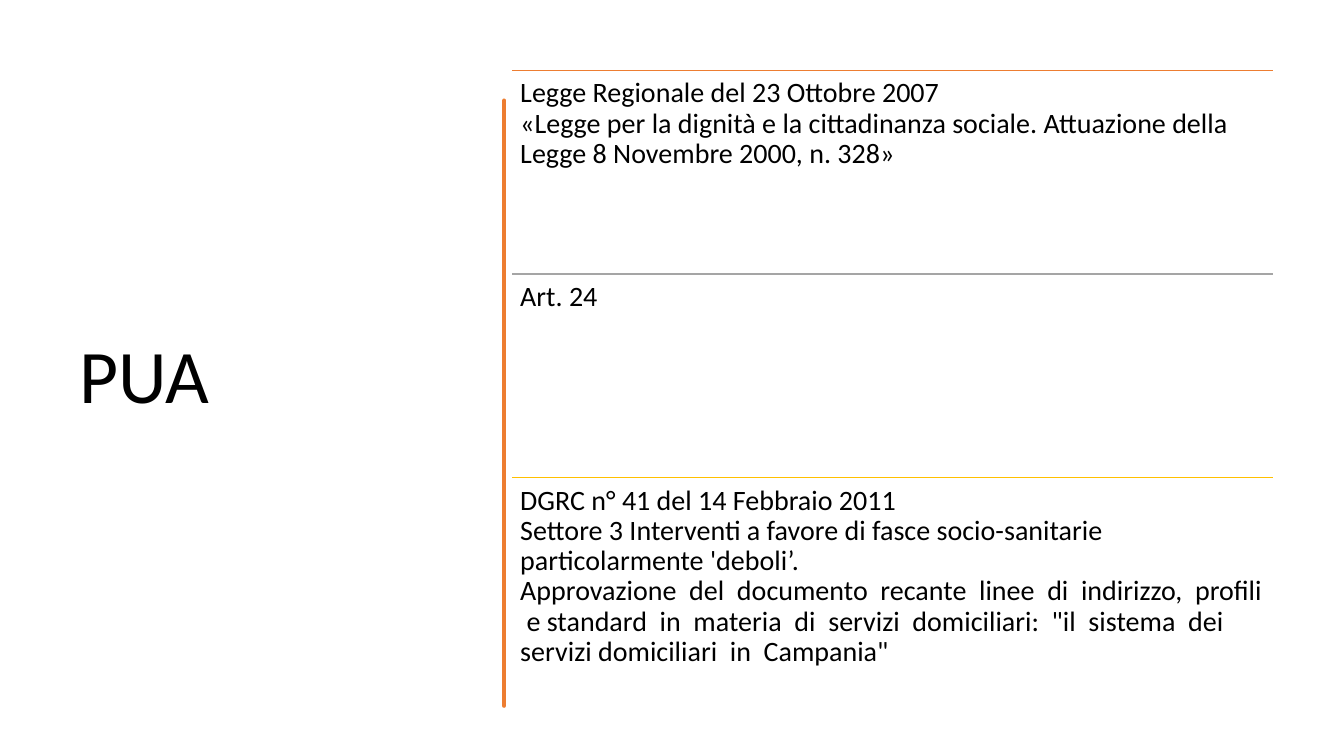
from lxml.etree import SubElement
from pptx import Presentation
from pptx.dml.color import RGBColor as Rgb
from pptx.enum.shapes import MSO_CONNECTOR as Connector
from pptx.enum.text import MSO_ANCHOR as Anchor, MSO_AUTO_SIZE as AutoSize, PP_ALIGN as Align
from pptx.oxml.ns import qn
from pptx.util import Inches, Pt

COLOURS = {"text": "000000", "orange": "ED7D31", "grey": "A5A5A5", "gold": "FFC000"}
FONT = "Calibri"
COLUMN_LEFT, COLUMN_WIDTH = 5.08, 7.55
ROW_TOP, ROW_HEIGHT = 0.7, 2.02
STEPS = 6

LAWS = [
    ("orange", "Legge Regionale del 23 Ottobre 2007\n"
     "«Legge per la dignità e la cittadinanza sociale. Attuazione della "
     "Legge 8 Novembre 2000, n. 328»"),
    ("grey", "Art. 24"),
    ("gold", "DGRC n° 41 del 14 Febbraio 2011\n"
     "Settore 3 Interventi a favore di fasce socio-sanitarie particolarmente 'deboli’.\n"
     "Approvazione  del  documento  recante  linee  di  indirizzo,  profili  e standard  in  "
     "materia  di  servizi  domiciliari:  \"il  sistema  dei  servizi domiciliari  in  Campania\""),
]

BRUSH_START = (4.75, 0.84)
BRUSH_CURVES = [
    (4.77, 1.02), (4.77, 1.19), (4.75, 1.46), (4.73, 1.73), (4.76, 1.95), (4.75, 2.26),
    (4.74, 2.57), (4.75, 2.62), (4.75, 2.94), (4.74, 3.25), (4.77, 3.42), (4.75, 3.56),
    (4.73, 3.7), (4.79, 4.14), (4.75, 4.36), (4.71, 4.57), (4.72, 4.84), (4.75, 5.1),
    (4.77, 5.36), (4.77, 5.64), (4.75, 5.84), (4.73, 6.03), (4.76, 6.5), (4.75, 6.76),
    (4.74, 6.76), (4.73, 6.76), (4.73, 6.76), (4.74, 6.46), (4.71, 6.44), (4.73, 6.13),
    (4.74, 5.83), (4.74, 5.7), (4.73, 5.57), (4.72, 5.44), (4.72, 4.95), (4.73, 4.77),
    (4.73, 4.59), (4.71, 4.45), (4.73, 4.15), (4.74, 3.86), (4.72, 3.73), (4.73, 3.35),
    (4.74, 2.98), (4.72, 2.81), (4.73, 2.5), (4.74, 2.18), (4.75, 2), (4.73, 1.81),
    (4.7, 1.63), (4.77, 1.04), (4.73, 0.84), (4.74, 0.84), (4.74, 0.84), (4.75, 0.84),
]


def colour(name):
    """Return the named colour."""
    return Rgb.from_string(COLOURS[name])


def write(frame, text, size):
    """Fill a text frame with one left-aligned paragraph."""
    frame.word_wrap = True
    frame.auto_size = AutoSize.NONE
    para = frame.paragraphs[0]
    para.text = text
    para.alignment = Align.LEFT
    para.line_spacing = 0.9
    para.font.name = FONT
    para.font.size = Pt(size)
    para.font.color.rgb = colour("text")


def set_title(page, text):
    """Place the title in the left column."""
    title = page.shapes.title
    title.left, title.top, title.width, title.height = map(Inches, (0.69, 0.7, 3.74, 6.11))
    title.text_frame.vertical_anchor = Anchor.MIDDLE
    write(title.text_frame, text, 54)


def curve_points(start, controls):
    """Yield points along a chain of cubic curves."""
    for first, second, end in zip(controls[::3], controls[1::3], controls[2::3]):
        for step in range(1, STEPS + 1):
            t = step / STEPS
            weights = ((1 - t) ** 3, 3 * t * (1 - t) ** 2, 3 * t * t * (1 - t), t ** 3)
            corners = (start, first, second, end)
            yield tuple(sum(w * c[axis] for w, c in zip(weights, corners)) for axis in (0, 1))
        start = end


def add_brush(page):
    """Draw the hand-drawn vertical divider."""
    builder = page.shapes.build_freeform(*BRUSH_START, scale=Inches(1))
    builder.add_line_segments(list(curve_points(BRUSH_START, BRUSH_CURVES)), close=True)
    brush = builder.convert_to_shape()
    brush.shadow.inherit = False
    brush.fill.solid()
    brush.fill.fore_color.rgb = colour("orange")
    brush.line.color.rgb = colour("orange")
    brush.line.width = Pt(3.25)
    SubElement(brush._element.spPr.find(qn("a:ln")), qn("a:round"))


def add_rule(page, top, name):
    """Draw the coloured rule above a row."""
    left, right, height = map(Inches, (COLUMN_LEFT, COLUMN_LEFT + COLUMN_WIDTH, top))
    rule = page.shapes.add_connector(Connector.STRAIGHT, left, height, right, height)
    rule.line.color.rgb = colour(name)
    rule.line.width = Pt(1)
    SubElement(rule._element.spPr, qn("a:effectLst"))


def add_law(page, row, name, text):
    """Add a rule and its text in the given row."""
    top = ROW_TOP + row * ROW_HEIGHT
    add_rule(page, top, name)
    box = page.shapes.add_textbox(*map(Inches, (COLUMN_LEFT, top, COLUMN_WIDTH, ROW_HEIGHT)))
    frame = box.text_frame
    frame.margin_left = frame.margin_right = frame.margin_top = frame.margin_bottom = Inches(0.08)
    write(frame, text, 20)


def main():
    """Build and save the slide."""
    deck = Presentation()
    deck.slide_width, deck.slide_height = Inches(13.33), Inches(7.5)
    page = deck.slides.add_slide(deck.slide_layouts[5])
    set_title(page, "PUA")
    add_brush(page)
    for row, (name, text) in enumerate(LAWS):
        add_law(page, row, name, text)
    deck.save("out.pptx")


if __name__ == "__main__":
    main()
